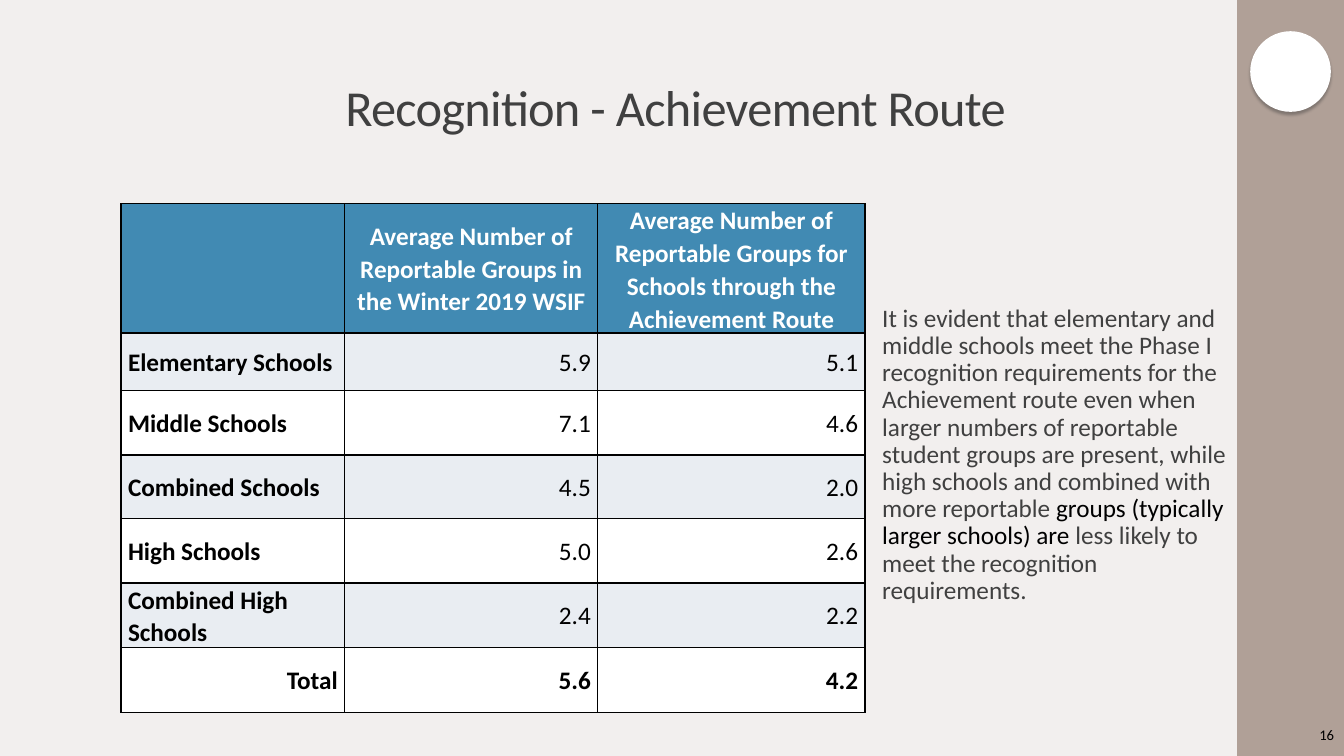
"""Builds the slide on recognition through the achievement route."""
from lxml.etree import SubElement
from pptx import Presentation
from pptx.dml.color import RGBColor
from pptx.enum.shapes import MSO_SHAPE
from pptx.enum.text import MSO_ANCHOR, PP_ALIGN
from pptx.oxml.ns import qn
from pptx.util import Inches, Pt

COLORS = {
    "background": "F2EFEE", "sidebar": "B0A097", "header": "418AB3",
    "band": "E9EDF2", "white": "FFFFFF", "black": "000000",
    "text": "404040", "shadow": "373737",
}
AVERAGES = [
    ("", "Average Number of Reportable Groups in the Winter 2019 WSIF",
     "Average Number of Reportable Groups for Schools through the Achievement Route"),
    ("Elementary Schools", "5.9", "5.1"),
    ("Middle Schools", "7.1", "4.6"),
    ("Combined Schools", "4.5", "2.0"),
    ("High Schools", "5.0", "2.6"),
    ("Combined High Schools", "2.4", "2.2"),
    ("Total", "5.6", "4.2"),
]
COLUMN_WIDTHS = [2.22, 2.51, 2.65]
ROW_HEIGHTS = [1.21, 0.57, 0.64, 0.63, 0.64, 0.64, 0.64]


def rgb(name):
    return RGBColor.from_string(COLORS[name])


class SlideBuilder:
    def __init__(self, slide, font="Calibri"):
        self.slide = slide
        self.font = font
        slide.background.fill.solid()
        slide.background.fill.fore_color.rgb = rgb("background")

    def shape(self, preset, bounds, color, shadow=False):
        shape = self.slide.shapes.add_shape(preset, *map(Inches, bounds))
        shape.fill.solid()
        shape.fill.fore_color.rgb = rgb(color)
        shape.line.fill.background()
        shape.shadow.inherit = False
        if shadow:
            effects = shape._element.spPr.find(qn("a:effectLst"))
            outer = SubElement(effects, qn("a:outerShdw"), blurRad=str(Pt(2)),
                               dist=str(Pt(2)), dir="5400000", rotWithShape="0")
            tint = SubElement(outer, qn("a:srgbClr"), val=COLORS["shadow"])
            SubElement(tint, qn("a:alpha"), val="40000")

    def paragraph(self, frame, runs, size, align, spacing=1.0, bold=False, tracking=None):
        paragraph = frame.paragraphs[0]
        paragraph.alignment = align
        paragraph.line_spacing = spacing
        for words, color in runs:
            run = paragraph.add_run()
            run.text = words
            run.font.name = self.font
            run.font.size = Pt(size)
            run.font.bold = bold
            run.font.color.rgb = rgb(color)
            if tracking is not None:
                run.font._element.set("spc", str(tracking))

    def text(self, bounds, runs, size, align=PP_ALIGN.LEFT, anchor=MSO_ANCHOR.MIDDLE,
             side_margin=0.1, **style):
        frame = self.slide.shapes.add_textbox(*map(Inches, bounds)).text_frame
        frame.word_wrap = True
        frame.vertical_anchor = anchor
        frame.margin_left = frame.margin_right = Inches(side_margin)
        self.paragraph(frame, runs, size, align, **style)

    def cell(self, cell, words, fill, color, align, bold):
        for side in ("lnL", "lnR", "lnT", "lnB"):
            border = SubElement(cell._tc.get_or_add_tcPr(), qn(f"a:{side}"), w=str(Pt(1)))
            solid = SubElement(border, qn("a:solidFill"))
            SubElement(solid, qn("a:srgbClr"), val=COLORS["black"])
        cell.fill.solid()
        cell.fill.fore_color.rgb = rgb(fill)
        cell.vertical_anchor = MSO_ANCHOR.MIDDLE
        cell.margin_left = cell.margin_right = Inches(0.07)
        cell.margin_top = cell.margin_bottom = 0
        if words:
            self.paragraph(cell.text_frame, [(words, color)], 18, align, 1.07, bold)

    def table(self, left, top, rows, widths, heights):
        bounds = (left, top, sum(widths), sum(heights))
        table = self.slide.shapes.add_table(
            len(rows), len(widths), *map(Inches, bounds)).table
        for column, width in zip(table.columns, widths):
            column.width = Inches(width)
        for row, height in zip(table.rows, heights):
            row.height = Inches(height)
        last = len(rows) - 1
        for r, values in enumerate(rows):
            for c, words in enumerate(values):
                if r == 0:
                    fill, color, align = "header", "white", PP_ALIGN.CENTER
                else:
                    fill, color = ("band" if r % 2 else "white"), "black"
                    align = PP_ALIGN.RIGHT if c or r == last else PP_ALIGN.LEFT
                self.cell(table.cell(r, c), words, fill, color, align,
                          bold=c == 0 or r in (0, last))


def main():
    deck = Presentation()
    deck.slide_width, deck.slide_height = Inches(13.33), Inches(7.5)
    page = SlideBuilder(deck.slides.add_slide(deck.slide_layouts[6]))
    page.shape(MSO_SHAPE.RECTANGLE, (12.27, 0, 1.06, 7.5), "sidebar")
    page.shape(MSO_SHAPE.OVAL, (12.4, 0.31, 0.8, 0.8), "white", shadow=True)
    page.text((1.2, 0.31, 11, 1.59), [("Recognition - Achievement Route", "text")], 36,
              PP_ALIGN.CENTER, spacing=0.85, tracking=-50)
    page.table(1.2, 2.02, AVERAGES, COLUMN_WIDTHS, ROW_HEIGHTS)
    finding = [
        ("It is evident that elementary and middle schools meet the Phase I recognition "
         "requirements for the Achievement route even when larger numbers of reportable "
         "student groups are present, while high schools and combined with more "
         "reportable ", "text"),
        ("groups (typically larger schools) are ", "black"),
        ("less likely to meet the recognition requirements.", "text"),
    ]
    page.text((8.75, 2.98, 3.45, 3.62), finding, 18, anchor=MSO_ANCHOR.TOP,
              side_margin=0, spacing=0.9)
    page.text((12.27, 7.09, 1.06, 0.4), [("16", "black")], 10.5, PP_ALIGN.RIGHT)
    deck.save("out.pptx")


if __name__ == "__main__":
    main()
